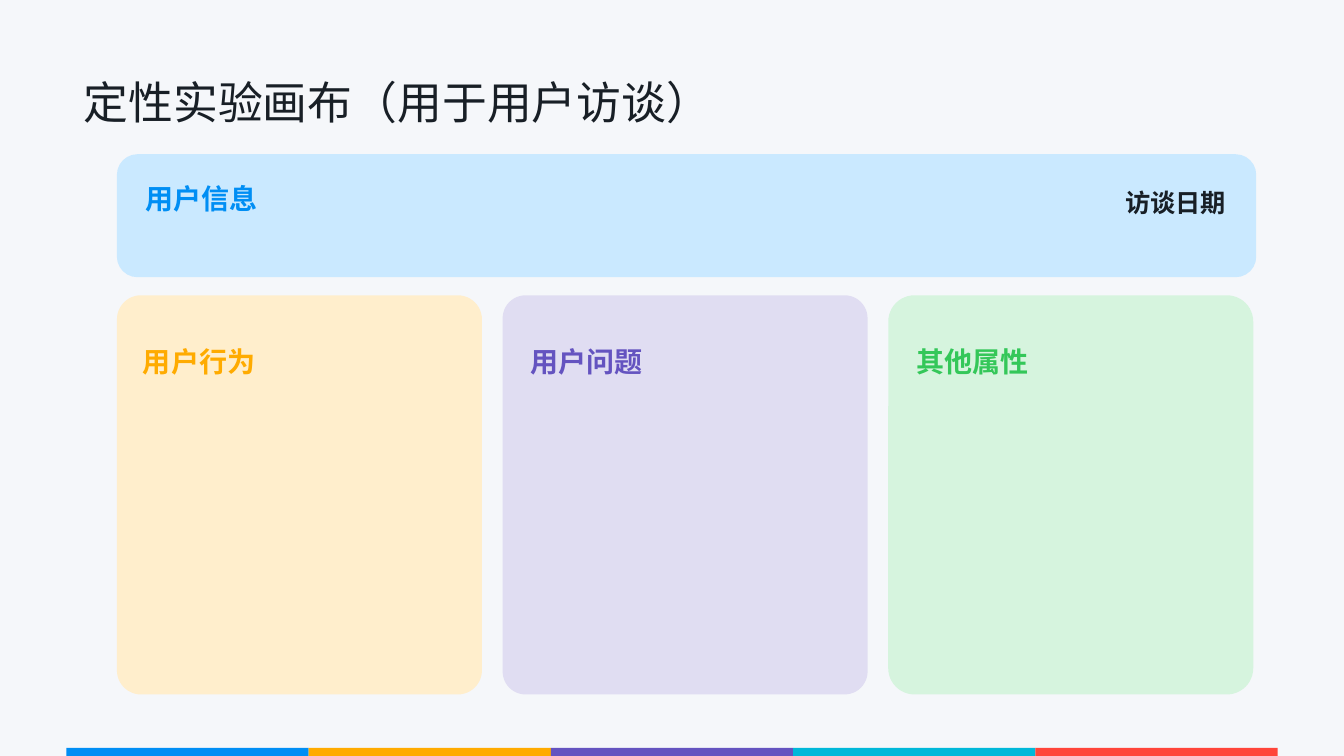
"""Build the qualitative experiment canvas slide for user interviews."""
from pptx import Presentation
from pptx.dml.color import RGBColor
from pptx.enum.shapes import MSO_SHAPE
from pptx.enum.text import MSO_ANCHOR, MSO_AUTO_SIZE, PP_ALIGN
from pptx.oxml.ns import qn
from pptx.util import Inches, Pt

FONT = "Noto Sans CJK SC"
COLORS = {
    "background": "F5F7FA", "ink": "181F26",
    "blue": "008EF4", "orange": "FFAB00", "purple": "6453C0",
    "cyan": "00B8D9", "red": "FF453A", "green": "34C759",
    "pale_blue": "CAE9FF", "pale_orange": "FFEECC",
    "pale_purple": "E0DDF2", "pale_green": "D6F4DE",
}
STRIPES = ["blue", "orange", "purple", "cyan", "red"]
COLUMNS = [
    ("用户行为", "orange", "pale_orange", 0.066, 1.32, 2.77),
    ("用户问题", "purple", "pale_purple", 0.063, 5.16, 3.3),
    ("其他属性", "green", "pale_green", 0.072, 8.99, 3.27),
]


def rgb(name):
    """Return the named colour."""
    return RGBColor.from_string(COLORS[name])


def place(at):
    """Convert left, top, width and height to lengths."""
    return [Inches(v) for v in at]


def write(tf, text, size, color, bold=False, spacing=1.5, align=PP_ALIGN.LEFT):
    """Write one formatted run into a text frame."""
    tf.word_wrap = True
    p = tf.paragraphs[0]
    p.alignment = align
    p.line_spacing = spacing
    p.space_before = Pt(0)
    r = p.add_run()
    r.text = text
    r.font.name = FONT
    r.font.size = Pt(size)
    r.font.bold = bold
    r.font.color.rgb = rgb(color)
    ea = r.font._element.makeelement(qn("a:ea"), {"typeface": FONT})
    r.font._element.find(qn("a:latin")).addnext(ea)


def add_title(s, text):
    """Place and fill the title placeholder."""
    title = s.shapes.title
    title.left, title.top, title.width, title.height = place((0.73, 0.55, 11.81, 0.81))
    tf = title.text_frame
    tf.auto_size = MSO_AUTO_SIZE.NONE
    tf.vertical_anchor = MSO_ANCHOR.MIDDLE
    write(tf, text, 32, "ink", spacing=1.2)


def add_block(s, at, color, radius=None):
    """Add a plain filled block, rounded when a radius is given."""
    kind = MSO_SHAPE.RECTANGLE if radius is None else MSO_SHAPE.ROUNDED_RECTANGLE
    sp = s.shapes.add_shape(kind, *place(at))
    if radius is not None:
        sp.adjustments[0] = radius
    sp.shadow.inherit = False
    sp.fill.solid()
    sp.fill.fore_color.rgb = rgb(color)
    sp.line.fill.background()


def add_label(s, at, text, color, size=20, align=PP_ALIGN.LEFT):
    """Add a bold label."""
    tf = s.shapes.add_textbox(*place(at)).text_frame
    tf.auto_size = MSO_AUTO_SIZE.SHAPE_TO_FIT_TEXT
    write(tf, text, size, color, bold=True, align=align)


def main():
    """Build and save the slide."""
    prs = Presentation()
    prs.slide_width, prs.slide_height = Inches(13.33), Inches(7.5)
    s = prs.slides.add_slide(prs.slide_layouts[5])
    s.background.fill.solid()
    s.background.fill.fore_color.rgb = rgb("background")

    for i, color in enumerate(STRIPES):
        add_block(s, (0.66 + i * 2.4025, 7.42, 2.4025, 0.08), color)
    add_title(s, "定性实验画布（用于用户访谈）")
    for i, (text, color, fill, radius, left, width) in enumerate(COLUMNS):
        add_block(s, (1.16 + i * 3.825, 2.93, 3.62, 3.96), fill, radius)
        add_label(s, (left, 3.2, width, 0.61), text, color)
    add_block(s, (1.16, 1.53, 11.3, 1.22), "pale_blue", 0.167)
    add_label(s, (1.34, 1.58, 4.75, 0.61), "用户信息", "blue")
    add_label(s, (10.73, 1.66, 1.53, 0.97), "访谈日期", "ink", 18, PP_ALIGN.RIGHT)
    prs.save("out.pptx")


if __name__ == "__main__":
    main()
